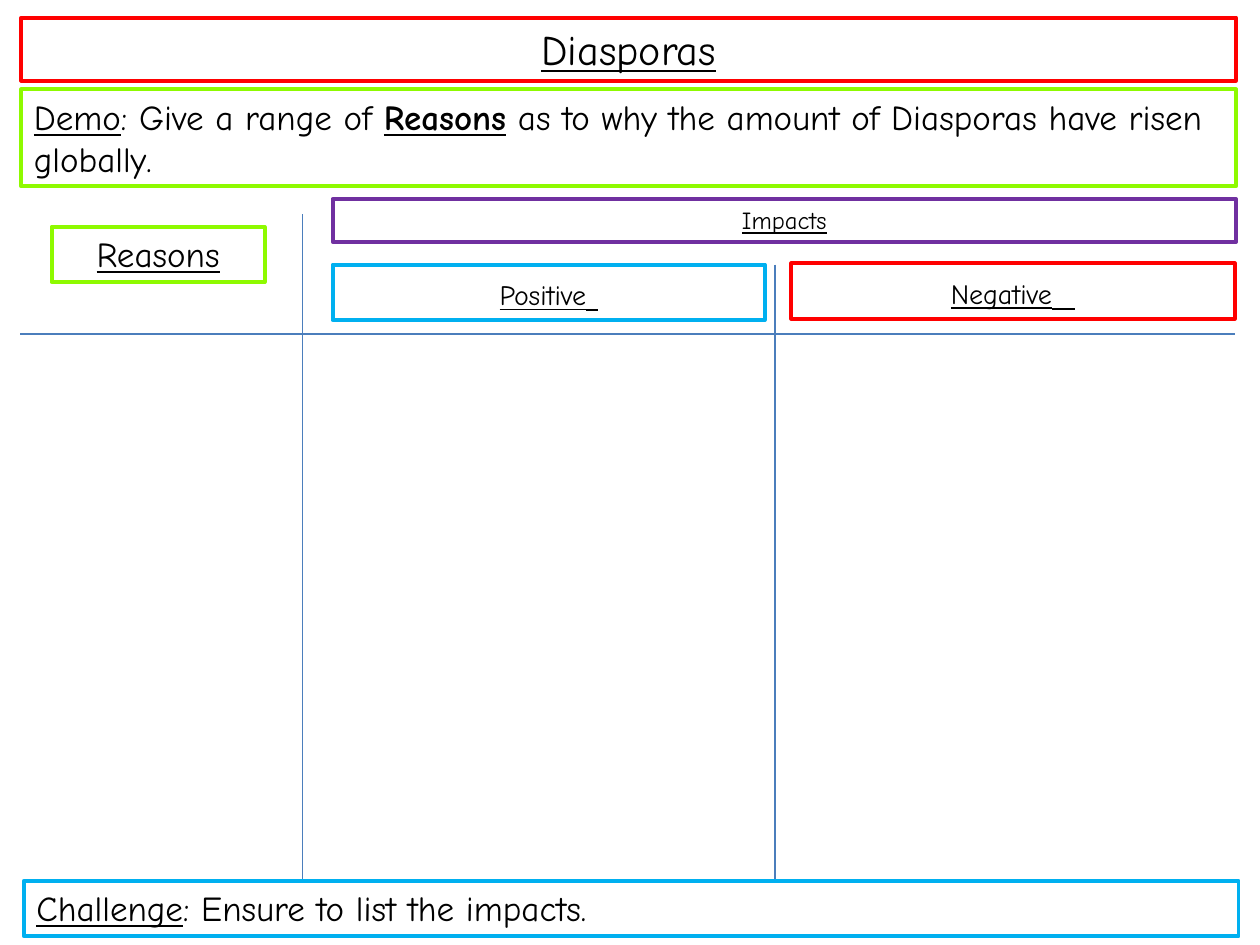
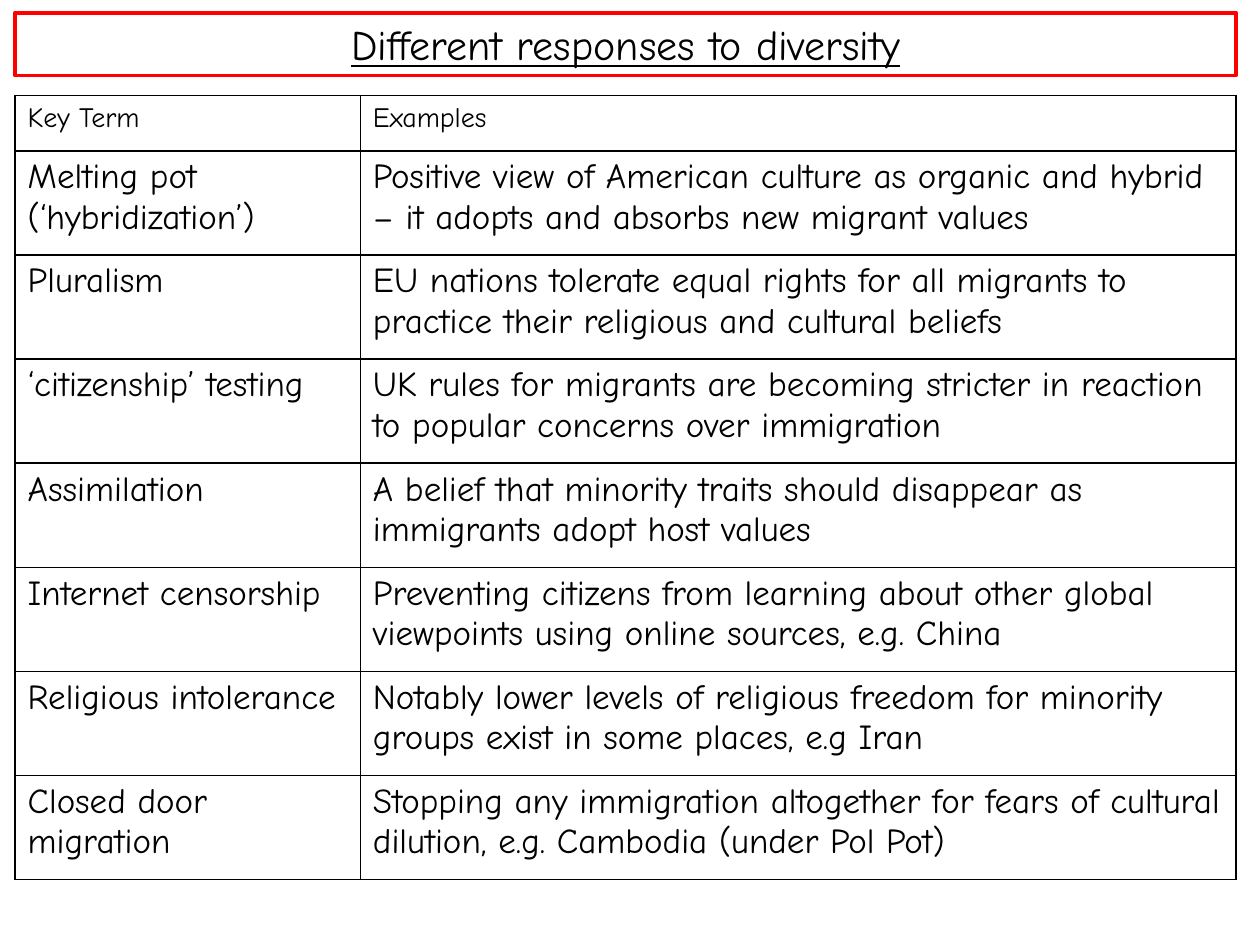
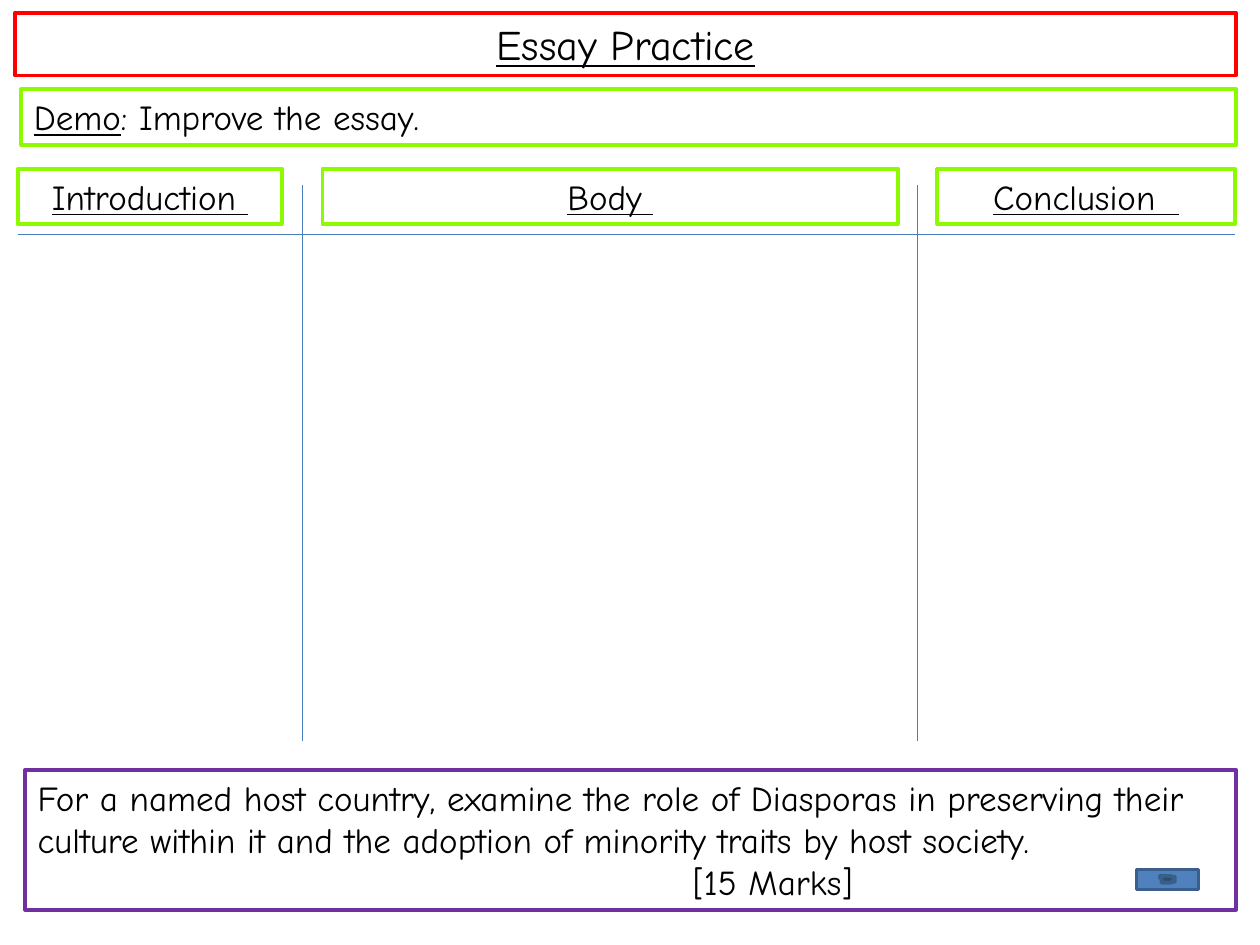
from dataclasses import dataclass

from lxml import etree
from pptx import Presentation
from pptx import util as u
from pptx.dml.color import RGBColor
from pptx.enum import shapes, text
from pptx.oxml import ns


@dataclass(frozen=True)
class Theme:
    font: str = "Comic Neue"
    ink: str = "000000"
    red: str = "FF0000"
    green: str = "8EFA00"
    violet: str = "7030A0"
    sky: str = "00B0F0"
    rule: str = "4B7EBC"
    button: str = "4F81BD"
    rim: str = "3A5F8C"
    title: int = 24
    body: int = 20
    label: int = 16
    small: int = 14
    frame: float = 2.25
    hair: float = 0.75


T = Theme()
TITLE = (0.12, 0.1, 9.69, 0.5)
ROW = 0.44  # height of a one-line box

TERMS = [
    ("Key Term", "Examples"),
    ("Melting pot (‘hybridization’)",
     "Positive view of American culture as organic and hybrid – it adopts and absorbs new migrant values"),
    ("Pluralism",
     "EU nations tolerate equal rights for all migrants to practice their religious and cultural beliefs"),
    ("‘citizenship’ testing",
     "UK rules for migrants are becoming stricter in reaction to popular concerns over immigration"),
    ("Assimilation",
     "A belief that minority traits should disappear as immigrants adopt host values"),
    ("Internet censorship",
     "Preventing citizens from learning about other global viewpoints using online sources, e.g. China"),
    ("Religious intolerance",
     "Notably lower levels of religious freedom for minority groups exist in some places, e.g Iran"),
    ("Closed door migration",
     "Stopping any immigration altogether for fears of cultural dilution, e.g. Cambodia (under Pol Pot)"),
]


def color(code):
    return RGBColor.from_string(code)


def inches(box):
    return [u.Inches(n) for n in box]


def outline(shape, code, width):
    shape.line.color.rgb = color(code)
    shape.line.width = u.Pt(width)


def add_run(para, words, size=T.body, line=False, bold=False):
    run = para.add_run()
    run.text = words
    font = run.font
    font.name, font.size = T.font, u.Pt(size)
    font.underline, font.bold = line, bold
    font.color.rgb = color(T.ink)


def frame(slide, box, code, runs, center=False):
    """Outlined box; each run is (words, size, underlined, bold)."""
    shape = slide.shapes.add_textbox(*inches(box))
    outline(shape, code, T.frame)
    body = shape.text_frame
    body.word_wrap = True
    body.auto_size = text.MSO_AUTO_SIZE.SHAPE_TO_FIT_TEXT
    para = body.paragraphs[0]
    if center:
        para.alignment = text.PP_ALIGN.CENTER
    for run in runs:
        add_run(para, *run)
    return body


def heading(slide, box, code, words, size=T.body, tail=""):
    runs = [(words, size, True)]
    if tail:
        runs.append((tail, T.body, True))
    frame(slide, box, code, runs, center=True)


def title(slide, words, box=TITLE):
    heading(slide, box, T.red, words, T.title)


def task(slide, box, code, lead, *runs):
    frame(slide, box, code, [(lead, T.body, True), *runs])


def rule(slide, x1, y1, x2, y2):
    line = slide.shapes.add_connector(
        shapes.MSO_CONNECTOR.STRAIGHT, *inches((x1, y1, x2, y2)))
    outline(line, T.rule, T.hair)
    etree.SubElement(line._element.spPr, ns.qn("a:effectLst"))


def grid(slide, box, across, downs):
    """One rule across and (x, top) rules down, measured from the box corner."""
    x, y, w, h = box
    for dx, dy in downs:
        rule(slide, x + dx, y + dy, x + dx, y + h)
    rule(slide, x, y + across, x + w, y + across)


def border(cell):
    props = cell._tc.get_or_add_tcPr()
    for i, side in enumerate(("lnL", "lnR", "lnT", "lnB")):
        edge = etree.Element(ns.qn("a:" + side), w=str(u.Pt(1)))
        fill = etree.SubElement(edge, ns.qn("a:solidFill"))
        etree.SubElement(fill, ns.qn("a:srgbClr"), val=T.ink)
        props.insert(i, edge)


def term_table(slide, box, rows):
    x, y, w, h = box
    first = 2.74
    table = slide.shapes.add_table(len(rows), 2, *inches(box)).table
    table.first_row = table.horz_banding = False
    for col, width in zip(table.columns, (first, w - first)):
        col.width = u.Inches(width)
    rest = (h - ROW) / (len(rows) - 1)
    for r, words in enumerate(rows):
        table.rows[r].height = u.Inches(rest if r else ROW)
        for c, word in enumerate(words):
            cell = table.cell(r, c)
            cell.fill.background()
            border(cell)
            add_run(cell.text_frame.paragraphs[0], word,
                    T.body if r else T.label)


def causes(slide, box):
    """Reasons beside positive and negative impacts."""
    x, y, w, h = box
    heading(slide, (x + 0.25, y + 0.1, 1.69, ROW), T.green, "Reasons")
    left = x + 2.48
    heading(slide, (left, y - 0.12, 7.17, 0.34), T.violet, "Impacts", T.small)
    heading(slide, (left, y + 0.4, 3.43, ROW), T.sky, "Positive", T.label, " ")
    heading(slide, (x + 6.12, y + 0.39, 3.52, ROW), T.red,
            "Negative", T.label, "  ")
    grid(slide, box, 0.95, [(2.24, 0), (5.99, 0.4)])


def essay(slide, box):
    """Three columns for the parts of the essay."""
    x, y, w, h = box
    parts = [("Introduction ", 0, 2.1), ("Body ", 2.42, 4.57),
             ("Conclusion  ", 7.3, 2.36)]
    for words, dx, width in parts:
        heading(slide, (x + dx, y - 0.13, width, ROW), T.green, words)
    grid(slide, box, 0.39, [(2.26, 0), (7.14, 0)])


def question(slide, box):
    """Exam question with its marks and a film button."""
    x, y, w, h = box
    body = frame(slide, box, T.violet, [(
        "For a named host country, examine the role of Diasporas in preserving "
        "their culture within it and the adoption of minority traits by host "
        "society.",)])
    marks = body.add_paragraph()
    marks._p.get_or_add_pPr().set("marL", str(u.Inches(5.2)))
    add_run(marks, "[15 Marks]")
    film = slide.shapes.add_shape(
        shapes.MSO_SHAPE.ACTION_BUTTON_MOVIE,
        *inches((x + 8.82, y + 0.79, 0.49, 0.16)))
    film.shadow.inherit = False
    film.fill.solid()
    film.fill.fore_color.rgb = color(T.button)
    outline(film, T.rim, 2)


def main():
    deck = Presentation()
    deck.slide_width, deck.slide_height = u.Inches(10), u.Inches(7.5)
    one, two, three = (deck.slides.add_slide(deck.slide_layouts[6])
                       for _ in range(3))

    # Diasporas
    title(one, "Diasporas", (0.17, 0.14, 9.64, 0.5))
    task(one, (0.17, 0.71, 9.64, 0.77), T.green, "Demo",
         (": Give a range of ",), ("Reasons", T.body, True, True),
         (" as to why the amount of Diasporas have risen globally.",))
    causes(one, (0.16, 1.7, 9.64, 5.29))
    task(one, (0.19, 6.99, 9.64, ROW), T.sky, "Challenge",
         (": Ensure to list the impacts.",))

    # Responses to diversity
    term_table(two, (0.12, 0.76, 9.69, 6.22), TERMS)
    title(two, "Different responses to diversity")

    # Essay practice
    question(three, (0.2, 6.11, 9.61, 1.11))
    title(three, "Essay Practice")
    task(three, (0.17, 0.71, 9.64, ROW), T.green, "Demo",
         (": Improve the essay.",))
    essay(three, (0.14, 1.47, 9.66, 4.41))

    deck.save("out.pptx")


if __name__ == "__main__":
    main()
